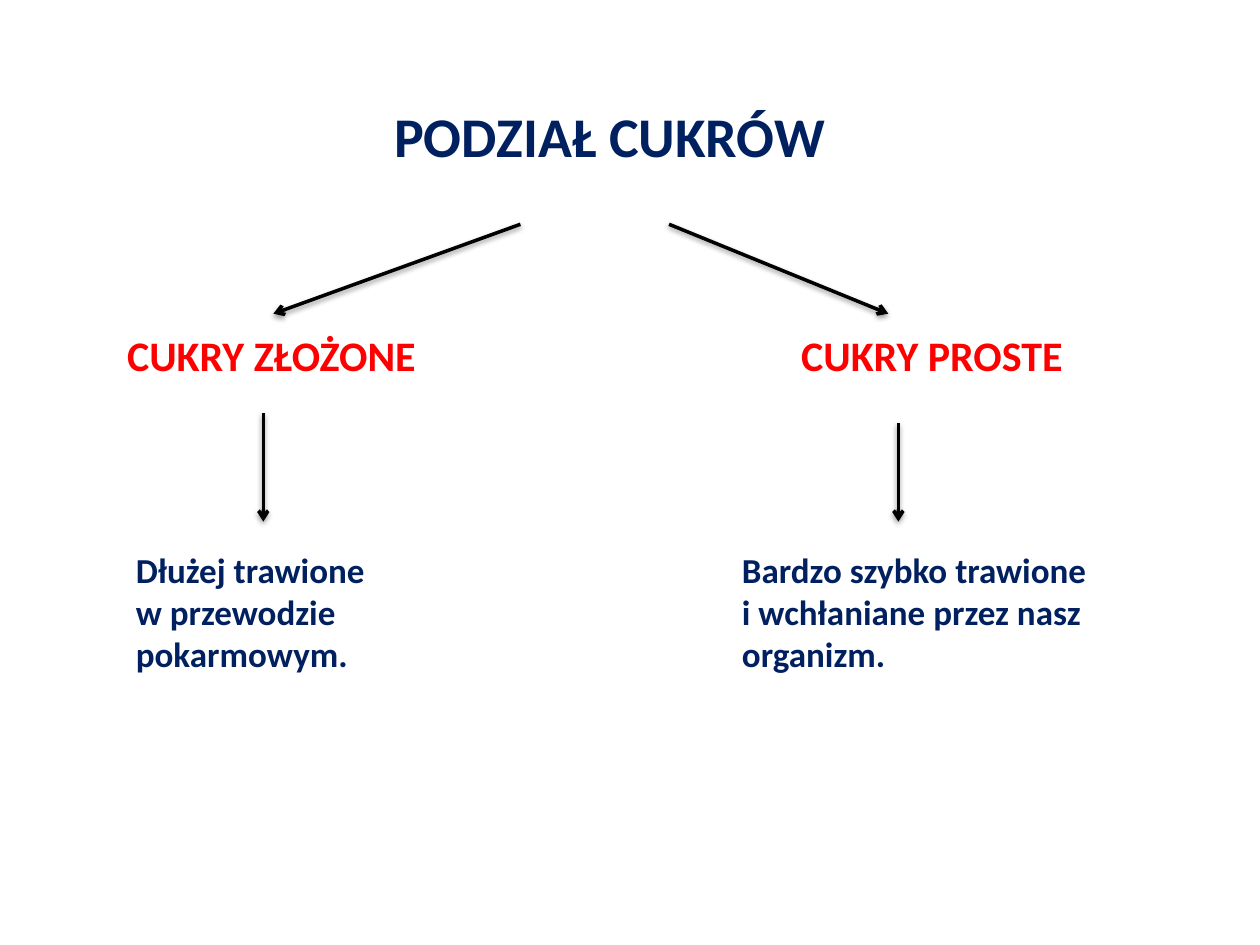
from lxml.etree import SubElement
from pptx import Presentation
from pptx.dml.color import RGBColor
from pptx.enum.shapes import MSO_CONNECTOR
from pptx.enum.text import MSO_AUTO_SIZE
from pptx.oxml.ns import qn
from pptx.util import Inches, Pt

COLORS = {"navy": "002060", "red": "FF0000", "black": "000000"}
STYLES = {
    "title": {"size": Pt(32), "color": "navy"},
    "group": {"size": Pt(24), "color": "red"},
    "detail": {"size": Pt(20), "color": "navy"},
}

# style, (left, top, width, height), paragraphs
LABELS = [
    ("title", (3.03, 0.76, 5.91, 0.64), ["PODZIAŁ CUKRÓW"]),
    ("group", (0.91, 2.57, 2.99, 0.5), ["CUKRY ZŁOŻONE"]),
    ("group", (6.26, 2.57, 3.31, 0.5), ["CUKRY PROSTE"]),
    ("detail", (0.98, 4.3, 2.44, 1.41),
     ["Dłużej trawione", "w przewodzie pokarmowym."]),
    ("detail", (5.79, 4.3, 3.78, 1.11),
     ["Bardzo szybko trawione", "i wchłaniane przez nasz organizm."]),
]

# start x, start y, end x, end y
ARROWS = [
    (4.13, 1.78, 2.17, 2.49),
    (5.31, 1.78, 7.05, 2.49),
    (2.09, 3.28, 2.09, 4.14),
    (7.13, 3.36, 7.13, 4.14),
]


def add_label(slide, style, place, paragraphs):
    frame = slide.shapes.add_textbox(*map(Inches, place)).text_frame
    frame.word_wrap = True
    frame.auto_size = MSO_AUTO_SIZE.SHAPE_TO_FIT_TEXT
    frame.text = "\n".join(paragraphs)
    font_format = {"name": "Calibri", "bold": True, "size": STYLES[style]["size"]}
    for paragraph in frame.paragraphs:
        font = paragraph.runs[0].font
        for attribute, value in font_format.items():
            setattr(font, attribute, value)
        font.color.rgb = RGBColor.from_string(COLORS[STYLES[style]["color"]])


def add_arrow(slide, ends):
    """Draw a line with an open head at its end and a soft shadow below."""
    arrow = slide.shapes.add_connector(MSO_CONNECTOR.STRAIGHT, *map(Inches, ends))
    arrow.line.width = Pt(2)
    arrow.line.color.rgb = RGBColor.from_string(COLORS["black"])
    SubElement(arrow.line._get_or_add_ln(), qn("a:tailEnd"), type="arrow")
    effects = SubElement(arrow._element.spPr, qn("a:effectLst"))
    shadow = SubElement(effects, qn("a:outerShdw"), blurRad=str(Pt(3.1)),
                        dist=str(Pt(1.6)), dir=str(90 * 60000), rotWithShape="0")
    shade = SubElement(shadow, qn("a:srgbClr"), val=COLORS["black"])
    SubElement(shade, qn("a:alpha"), val="38000")


def main():
    prs = Presentation()
    prs.slide_width, prs.slide_height = Inches(10), Inches(7.5)
    slide = prs.slides.add_slide(prs.slide_layouts[6])
    for label in LABELS:
        add_label(slide, *label)
    for ends in ARROWS:
        add_arrow(slide, ends)
    prs.save("out.pptx")


if __name__ == "__main__":
    main()
